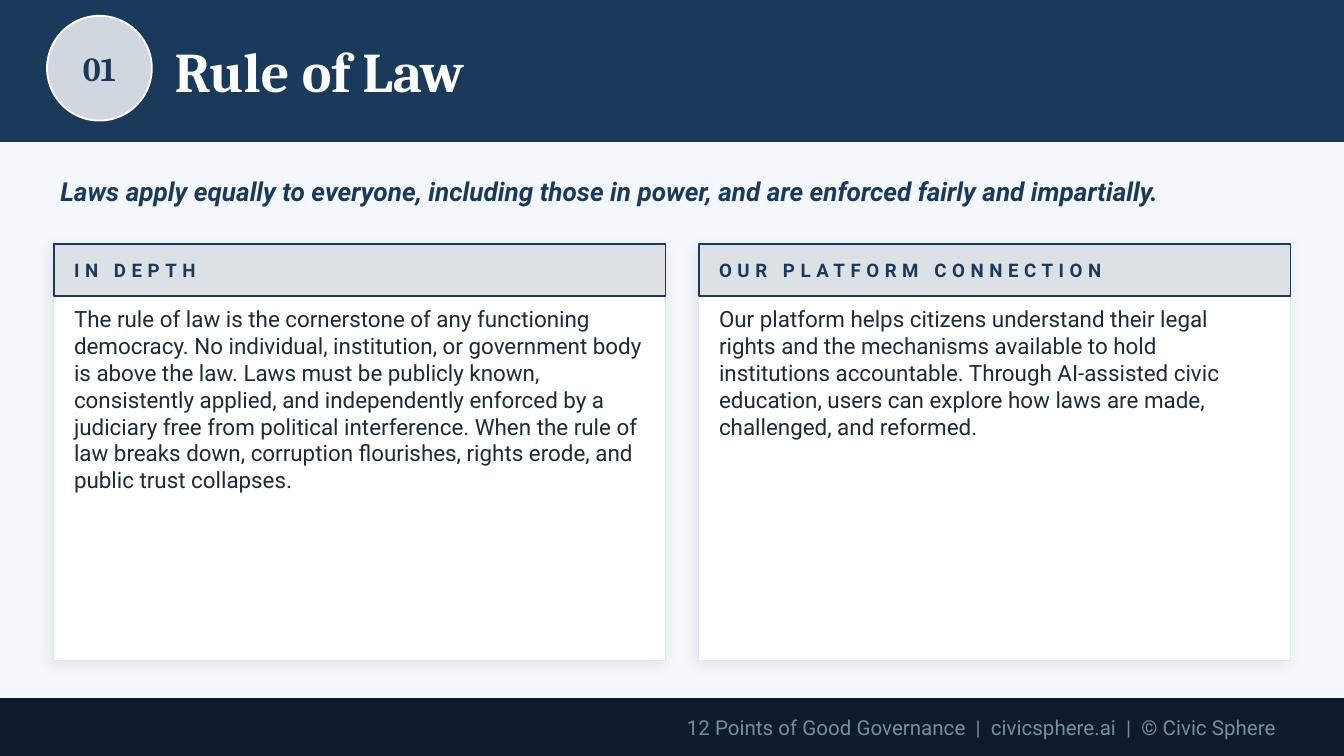
from lxml import etree
from pptx import Presentation
from pptx.dml.color import RGBColor
from pptx.enum import shapes, text
from pptx.oxml.ns import qn
from pptx.util import Cm, Pt

NAVY = RGBColor(0x1A, 0x3A, 0x5C)
INK = RGBColor(0x0D, 0x1B, 0x2A)
BODY = RGBColor(0x1C, 0x2B, 0x3A)
MUTED = RGBColor(0x7A, 0x8B, 0xA0)
PALE = RGBColor(0xF4, 0xF7, 0xFB)
BORDER = RGBColor(0xE0, 0xE8, 0xF0)
WHITE = RGBColor(0xFF, 0xFF, 0xFF)

RECT = shapes.MSO_SHAPE.RECTANGLE
OVAL = shapes.MSO_SHAPE.OVAL
MIDDLE = text.MSO_ANCHOR.MIDDLE
TOP = text.MSO_ANCHOR.TOP
LEFT, CENTER, RIGHT = text.PP_ALIGN.LEFT, text.PP_ALIGN.CENTER, text.PP_ALIGN.RIGHT

SLIDE_W, SLIDE_H = 25.4, 14.29
CARD_TOP, CARD_H, CARD_HEAD_H = 4.62, 7.87, 0.97
CARD_PAD = 0.38

CARDS = [
    # left, width, body width, heading, body
    (1.02, 11.56, 10.8, "IN DEPTH",
     "The rule of law is the cornerstone of any functioning democracy. "
     "No individual, institution, or government body is above the law. "
     "Laws must be publicly known, consistently applied, and independently "
     "enforced by a judiciary free from political interference. When the rule "
     "of law breaks down, corruption flourishes, rights erode, and public "
     "trust collapses."),
    (13.21, 11.18, 10.41, "OUR PLATFORM CONNECTION",
     "Our platform helps citizens understand their legal rights and the "
     "mechanisms available to hold institutions accountable. Through "
     "AI-assisted civic education, users can explore how laws are made, "
     "challenged, and reformed."),
]


def add_box(slide, kind, x, y, w, h, fill, line, line_pt=1, opacity=None):
    """Add a preset shape; opacity is a percentage of the fill."""
    sp = slide.shapes.add_shape(kind, Cm(x), Cm(y), Cm(w), Cm(h))
    sp.shadow.inherit = False
    sp.fill.solid()
    sp.fill.fore_color.rgb = fill
    sp.line.color.rgb = line
    sp.line.width = Pt(line_pt)
    if opacity is not None:
        color = sp._element.spPr.find(qn("a:solidFill"))[0]
        etree.SubElement(color, qn("a:alpha"), val=str(opacity * 1000))
    return sp


def add_soft_shadow(sp):
    effects = sp._element.spPr.find(qn("a:effectLst"))
    shadow = etree.SubElement(
        effects, qn("a:outerShdw"), blurRad=str(Pt(8)), dist=str(Pt(2)),
        dir=str(135 * 60000), algn="bl", rotWithShape="0")
    color = etree.SubElement(shadow, qn("a:srgbClr"), val="000000")
    etree.SubElement(color, qn("a:alpha"), val="8000")


def add_text(slide, x, y, w, h, words, size, color, font="Roboto", bold=False,
             italic=False, align=LEFT, anchor=MIDDLE, spacing=None):
    """Add a text box without margins; spacing is in points."""
    tf = slide.shapes.add_textbox(Cm(x), Cm(y), Cm(w), Cm(h)).text_frame
    tf.word_wrap = True
    tf.vertical_anchor = anchor
    tf.margin_left = tf.margin_right = tf.margin_top = tf.margin_bottom = 0
    tf.text = words
    p = tf.paragraphs[0]
    p.alignment = align
    r = p.runs[0]
    r.font.name = font
    r.font.size = Pt(size)
    r.font.bold = bold
    r.font.italic = italic
    r.font.color.rgb = color
    if spacing:
        r.font._element.set("spc", str(spacing * 100))


def add_header(slide, number, title):
    add_box(slide, RECT, 0, 0, SLIDE_W, 2.67, NAVY, NAVY)
    badge = (0.89, 0.3, 1.98, 1.98)
    add_box(slide, OVAL, *badge, WHITE, WHITE, opacity=80)
    add_text(slide, *badge, number, 18, NAVY, "Cambria", bold=True, align=CENTER)
    add_text(slide, 3.3, 0.25, 21.08, 2.16, title, 30, WHITE, "Cambria", bold=True)


def add_card(slide, x, w, body_w, heading, body):
    card = add_box(slide, RECT, x, CARD_TOP, w, CARD_H, WHITE, BORDER, 0.5)
    add_soft_shadow(card)
    add_box(slide, RECT, x, CARD_TOP, w, CARD_HEAD_H, NAVY, NAVY, opacity=15)
    text_x = x + CARD_PAD
    add_text(slide, text_x, CARD_TOP + 0.08, body_w, 0.81, heading, 10, NAVY,
             bold=True, spacing=3)
    add_text(slide, text_x, CARD_TOP + 1.15, body_w, 6.48, body, 12, BODY,
             anchor=TOP)


def add_footer(slide, words):
    add_box(slide, RECT, 0, 13.21, SLIDE_W, 1.07, INK, INK)
    add_text(slide, 1.27, 13.26, 22.86, 0.97, words, 11, MUTED, align=RIGHT)


def main():
    prs = Presentation()
    prs.slide_width, prs.slide_height = Cm(SLIDE_W), Cm(SLIDE_H)
    slide = prs.slides.add_slide(prs.slide_layouts[6])
    slide.background.fill.solid()
    slide.background.fill.fore_color.rgb = PALE

    add_header(slide, "01", "Rule of Law")
    add_text(slide, 1.14, 2.92, 23.11, 1.4,
             "Laws apply equally to everyone, including those in power, "
             "and are enforced fairly and impartially.",
             14, NAVY, bold=True, italic=True)
    for card in CARDS:
        add_card(slide, *card)
    add_footer(slide, "12 Points of Good Governance  |  civicsphere.ai  |  © Civic Sphere")
    prs.save("out.pptx")


if __name__ == "__main__":
    main()
